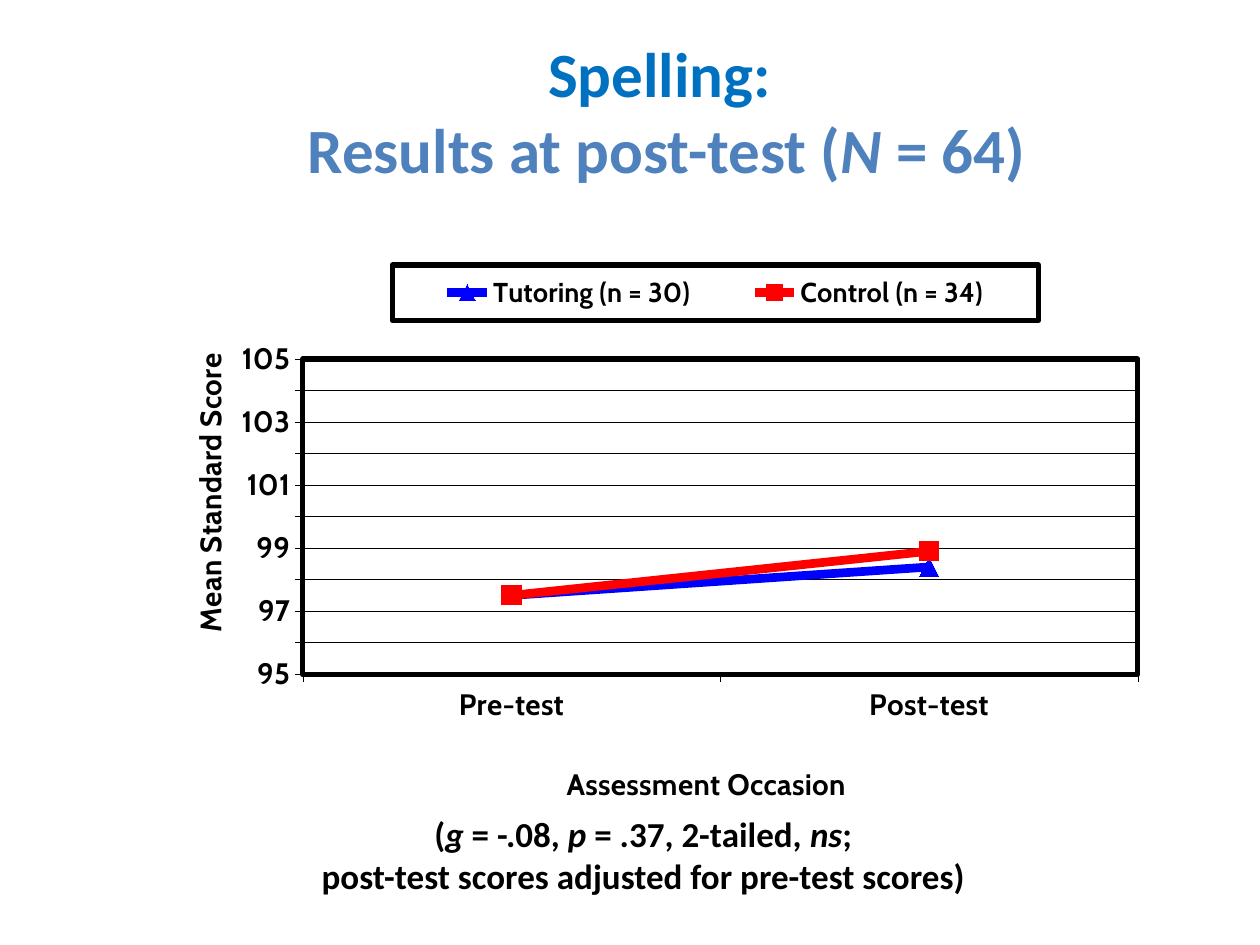
from pptx import Presentation
from pptx.chart.data import CategoryChartData
from pptx.dml.color import RGBColor
from pptx.enum.chart import XL_CHART_TYPE as ChartType, XL_LEGEND_POSITION as LegendPosition
from pptx.enum.chart import XL_MARKER_STYLE as Marker, XL_TICK_MARK as TickMark
from pptx.enum.text import MSO_ANCHOR as Anchor, PP_ALIGN as Align
from pptx.oxml import parse_xml
from pptx.oxml.ns import nsdecls, qn
from pptx.util import Inches, Pt

BLACK, BLUE, RED = "000000", "0000FF", "FF0000"
CHART_FONT = "Cabin"
SERIES = [
    ("Tutoring (n = 30)", (97.5, 98.4), BLUE, Marker.TRIANGLE),
    ("Control (n = 34)", (97.5, 98.9), RED, Marker.SQUARE),
]


def color(value):
    """Turn a hex string into a colour."""
    return RGBColor.from_string(value)


def format_font(font, size, name, fill=BLACK, italic=False):
    """Set a bold font with its size, face and colour."""
    font.size, font.name, font.bold, font.italic = Pt(size), name, True, italic
    font.color.rgb = color(fill)


def format_line(line, fill, width):
    """Set the colour and width of a line."""
    line.color.rgb = color(fill)
    line.width = Pt(width)


def place(shape, left, top, width, height):
    """Position a shape in inches."""
    shape.left, shape.top = Inches(left), Inches(top)
    shape.width, shape.height = Inches(width), Inches(height)


def write(paragraph, text, size=20, name="Calibri", fill=BLACK, italic=False):
    """Add formatted text to a paragraph, breaking lines at newlines."""
    for index, line in enumerate(text.split("\n")):
        if index:
            paragraph.add_line_break()
        if line:
            run = paragraph.add_run()
            run.text = line
            format_font(run.font, size, name, fill, italic)


def set_layout(element, index, x, y, width=None, height=None, inner=False):
    """Give a chart part a manual layout in shares of the chart."""
    values = [("layoutTarget", "inner")] if inner else []
    values += [("xMode", "edge"), ("yMode", "edge"), ("x", x), ("y", y)]
    if width:
        values += [("w", width), ("h", height)]
    items = "".join(f'<c:{tag} val="{value}"/>' for tag, value in values)
    existing = element.find(qn("c:layout"))
    if existing is not None:
        element.remove(existing)
    element.insert(index, parse_xml(
        f'<c:layout {nsdecls("c")}><c:manualLayout>{items}</c:manualLayout></c:layout>'))


def add_border(element):
    """Append a white fill and a heavy black border to a chart part."""
    element.append(parse_xml(
        f'<c:spPr {nsdecls("c", "a")}><a:solidFill><a:srgbClr val="FFFFFF"/></a:solidFill>'
        f'<a:ln w="{Pt(3)}"><a:solidFill><a:srgbClr val="{BLACK}"/></a:solidFill></a:ln></c:spPr>'))


def format_axis(axis, title, x, y):
    """Format an axis and place its title."""
    write(axis.axis_title.text_frame.paragraphs[0], title, size=16.9, name=CHART_FONT)
    set_layout(axis.axis_title._element, 1, x, y)
    format_font(axis.tick_labels.font, 16.9, CHART_FONT)
    format_line(axis.format.line, BLACK, 0.25)
    axis.major_tick_mark, axis.minor_tick_mark = TickMark.OUTSIDE, TickMark.NONE


def format_legend(chart):
    """Show the boxed legend above the plot."""
    chart.has_legend = True
    legend = chart.legend
    legend.position = LegendPosition.TOP
    legend.include_in_layout = False
    set_layout(legend._element, 1, 0.24, 0.01, 0.65, 0.1)
    add_border(legend._element)
    format_font(legend.font, 15.6, CHART_FONT)


def add_score_chart(slide):
    """Add the line chart of mean scores."""
    data = CategoryChartData(number_format="0")
    data.categories = ["Pre-test", "Post-test"]
    for name, values, *_ in SERIES:
        data.add_series(name, values)
    frame = slide.shapes.add_chart(ChartType.LINE_MARKERS, Inches(1.22), Inches(2.06),
                                   Inches(7.89), Inches(4.39), data)
    chart = frame.chart
    chart.has_title = False
    format_font(chart.font, 16.9, CHART_FONT)
    format_axis(chart.category_axis, "Assessment Occasion", 0.41, 0.9)
    value_axis = chart.value_axis
    format_axis(value_axis, "Mean Standard Score", 0.03, 0.16)
    value_axis.minimum_scale, value_axis.maximum_scale, value_axis.major_unit = 95, 105, 1
    value_axis.has_major_gridlines = True
    format_line(value_axis.major_gridlines.format.line, BLACK, 0.25)
    chart.plots[0].vary_by_categories = False
    for series, (_, _, fill, marker) in zip(chart.plots[0].series, SERIES):
        series.smooth = False
        format_line(series.format.line, fill, 5)
        series.marker.style, series.marker.size = marker, 11
        series.marker.format.fill.solid()
        series.marker.format.fill.fore_color.rgb = color(fill)
        format_line(series.marker.format.line, fill, 0.75)
    format_legend(chart)
    plot_area = chart._chartSpace.chart.plotArea
    set_layout(plot_area, 0, 0.15, 0.18, 0.84, 0.57, inner=True)
    add_border(plot_area)


def add_title(slide):
    """Fill the title placeholder."""
    title = slide.shapes.title
    place(title, 0.75, 0.17, 9.08, 1.41)
    title.text_frame.vertical_anchor = Anchor.MIDDLE
    paragraph = title.text_frame.paragraphs[0]
    paragraph.alignment = Align.CENTER
    write(paragraph, "Spelling: \n", size=36, fill="0070C0")
    for text, italic in [("Results at post-test (", False), ("N", True), (" = 64)", False)]:
        write(paragraph, text, size=36, fill="4F81BD", italic=italic)


def add_note(slide):
    """Add the statistics below the chart."""
    box = slide.shapes.add_textbox(0, 0, 0, 0)
    place(box, 0.79, 6.4, 8.63, 0.77)
    box.text_frame.word_wrap = True
    paragraph = box.text_frame.paragraphs[0]
    paragraph.alignment = Align.CENTER
    pieces = ["(", "g", " = -.08, ", "p", " = .37, 2-tailed, ", "ns",
              ";\npost-test scores adjusted for pre-test scores)"]
    for index, text in enumerate(pieces):
        write(paragraph, text, italic=index % 2 == 1)


def main():
    """Build and save the slide."""
    presentation = Presentation()
    presentation.slide_width, presentation.slide_height = Inches(10), Inches(7.5)
    slide = presentation.slides.add_slide(presentation.slide_layouts[5])
    add_title(slide)
    add_score_chart(slide)
    add_note(slide)
    presentation.save("out.pptx")


if __name__ == "__main__":
    main()
